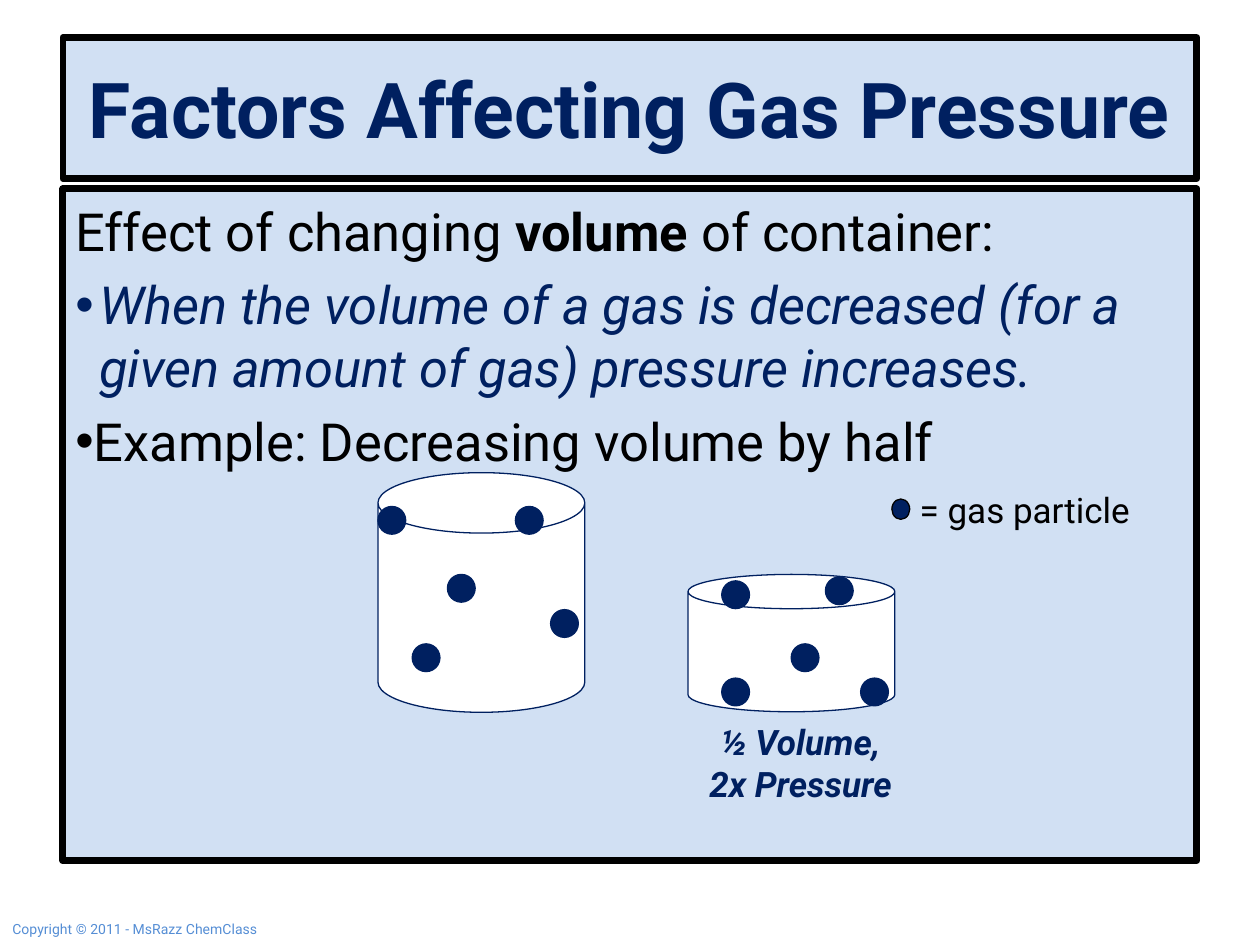
from lxml import etree
from pptx import Presentation
from pptx.dml.color import RGBColor
from pptx.enum.shapes import MSO_SHAPE
from pptx.enum.text import MSO_ANCHOR, MSO_AUTO_SIZE, PP_ALIGN
from pptx.oxml.ns import qn
from pptx.util import Cm, Pt

RECT, OVAL, CAN = MSO_SHAPE.RECTANGLE, MSO_SHAPE.OVAL, MSO_SHAPE.CAN
LEFT, CENTER = PP_ALIGN.LEFT, PP_ALIGN.CENTER
TOP, MIDDLE = MSO_ANCHOR.TOP, MSO_ANCHOR.MIDDLE
NAVY, BLACK, WHITE, PALE, BLUE = "002060", "000000", "FFFFFF", "C6D9F1", "558ED5"
DOT = 0.56

# Cylinders: left, top, width, height, rim, then particle corners
TALL = (7.62, 9.53, 4.17, 4.83, 0.292,
        [(7.62, 10.21), (8.31, 12.98), (10.39, 10.21), (9.02, 11.58), (11.1, 12.29)])
SHORT = (13.87, 11.58, 4.17, 2.77, 0.25,
         [(17.35, 13.67), (16.64, 11.63), (15.95, 12.98), (14.55, 11.71), (14.55, 13.67)])


def color(code):
    return RGBColor.from_string(code)


def paint(shape, fill, line, width=0.75, alpha=None):
    """Set fill and outline, with an optional opacity in percent."""
    shape.fill.solid()
    shape.fill.fore_color.rgb = color(fill)
    shape.line.color.rgb = color(line)
    shape.line.width = Pt(width)
    if alpha:
        tint = shape.fill._xPr.find(qn("a:solidFill"))[0]
        etree.SubElement(tint, qn("a:alpha"), val=str(alpha * 1000))


def write(para, text, size=20, tone=BLACK, bold=False, italic=False, align=LEFT):
    """Add text to a paragraph; a newline becomes a line break."""
    para.alignment = align
    for i, part in enumerate(text.split("\n")):
        if i:
            para.add_line_break()
        run = para.add_run()
        run.text = part
        font = run.font
        font.name, font.size = "Roboto", Pt(size)
        font.bold, font.italic = bold, italic
        font.color.rgb = color(tone)


def bullet(para, hang=0):
    props = para._p.get_or_add_pPr()
    props.set("marL", str(Cm(hang)))
    props.set("indent", str(-Cm(hang)))
    etree.SubElement(props, qn("a:buFont"), typeface="Arial")
    etree.SubElement(props, qn("a:buChar"), char="•")


def setup(shape, anchor):
    frame = shape.text_frame
    frame.word_wrap = True
    frame.auto_size = MSO_AUTO_SIZE.NONE
    frame.vertical_anchor = anchor
    return frame


def label(slide, text, x, y, w, h, **style):
    box = slide.shapes.add_textbox(Cm(x), Cm(y), Cm(w), Cm(h))
    write(setup(box, TOP).paragraphs[0], text, **style)


def draw(slide, kind, x, y, w, h):
    shape = slide.shapes.add_shape(kind, Cm(x), Cm(y), Cm(w), Cm(h))
    shape.shadow.inherit = False
    return shape


def jar(slide, x, y, w, h, rim):
    can = draw(slide, CAN, x, y, w, h)
    can.adjustments[0] = rim
    paint(can, WHITE, NAVY)


def header(slide):
    title = slide.shapes.title
    title.left, title.top = Cm(1.27), Cm(0.76)
    title.width, title.height = Cm(22.86), Cm(2.84)
    paint(title, PALE, BLACK, 4, 80)
    write(setup(title, MIDDLE).paragraphs[0], "Factors Affecting Gas Pressure",
          size=44, tone=NAVY, bold=True, align=CENTER)


def body(slide):
    panel = draw(slide, RECT, 1.27, 3.81, 22.86, 13.54)
    paint(panel, PALE, BLACK, 4, 80)
    frame = setup(panel, TOP)
    frame.margin_top = Cm(0.2)
    intro = frame.paragraphs[0]
    write(intro, "Effect of changing ", size=30)
    write(intro, "volume", size=30, bold=True)
    write(intro, " of container:", size=30)
    rule, case = frame.add_paragraph(), frame.add_paragraph()
    rule.space_before = case.space_before = Pt(6)
    bullet(rule, 0.48)
    bullet(case)
    write(rule, "When the volume of a gas is decreased (for a given amount "
          "of gas) pressure increases.", size=30, tone=NAVY, italic=True)
    write(case, "Example: Decreasing volume by half", size=30)


def main():
    prs = Presentation()
    prs.slide_width, prs.slide_height = Cm(25.4), Cm(19.05)
    slide = prs.slides.add_slide(prs.slide_layouts[5])

    # Copyright line, title and main text
    label(slide, "Copyright © 2011 - MsRazz ChemClass", 0, 18.44, 6.02, 0.61,
          size=8, tone=BLUE)
    header(slide)
    body(slide)

    # Legend
    paint(draw(slide, OVAL, 17.98, 10.06, 0.36, 0.41), NAVY, BLACK)
    label(slide, "= gas particle", 18.29, 9.73, 5.05, 1.47)

    # Full and half volume, with the same number of particles
    for *size, dots in (TALL, SHORT):
        jar(slide, *size)
        for x, y in dots:
            paint(draw(slide, OVAL, x, y, DOT, DOT), NAVY, NAVY)
    label(slide, "½ Volume,\n2x Pressure", 13.28, 14.4, 5.72, 2.11,
          tone=NAVY, bold=True, italic=True, align=CENTER)

    prs.save("out.pptx")


if __name__ == "__main__":
    main()
